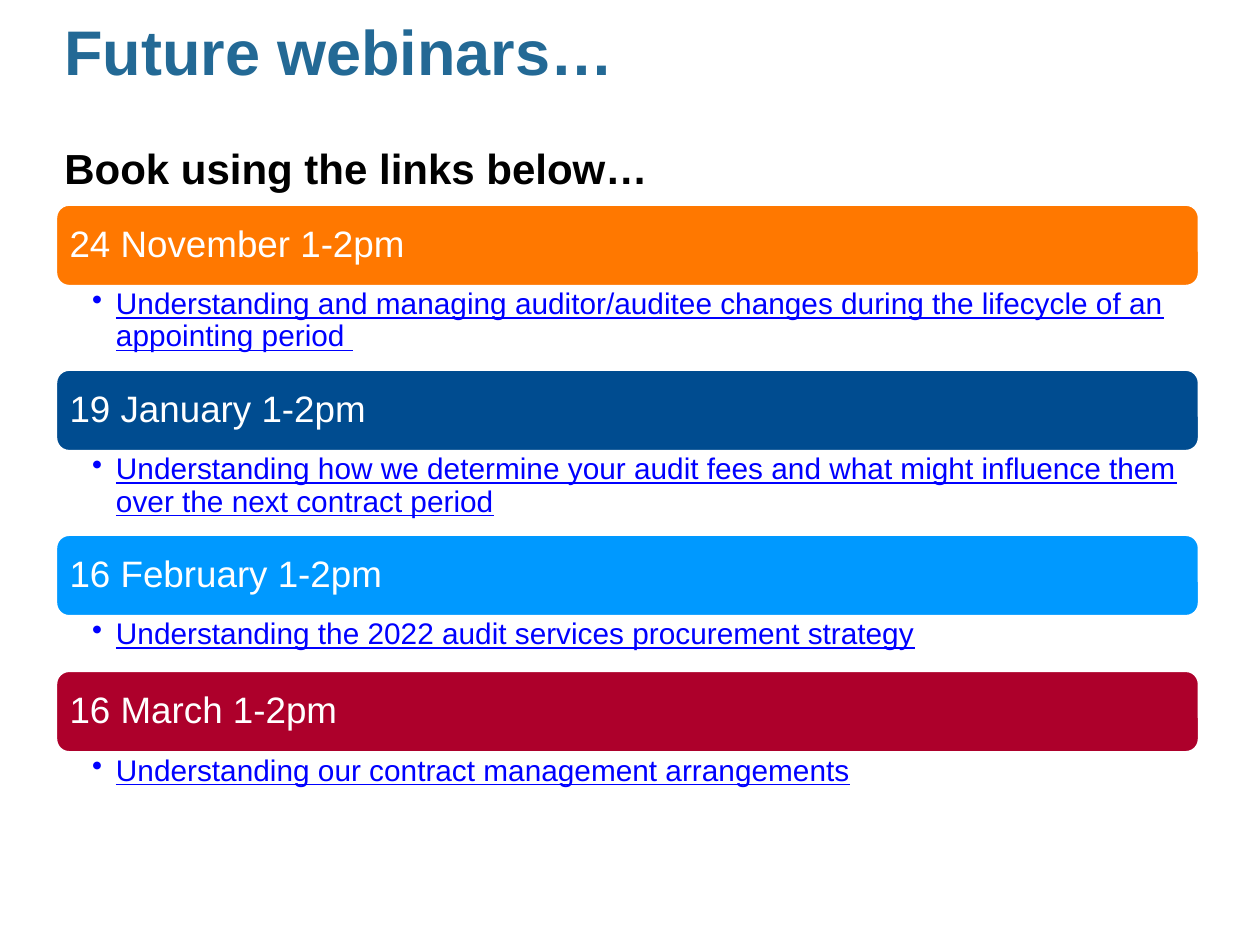
from lxml import etree
from pptx import Presentation
from pptx import util as u
from pptx.dml.color import RGBColor
from pptx.enum import shapes, text
from pptx.oxml import ns

LEFT, WIDTH = 0.44, 9.08
BAR_HEIGHT = 0.655
LINK_LINE, LINK_PADDING = 0.23, 0.195

WEBINARS = [
    ("24 November 1-2pm", "FF7800", 2,
     "Understanding and managing auditor/auditee changes during the lifecycle of an appointing period "),
    ("19 January 1-2pm", "004C90", 2,
     "Understanding how we determine your audit fees and what might influence them over the next contract period"),
    ("16 February 1-2pm", "0099FF", 1,
     "Understanding the 2022 audit services procurement strategy"),
    ("16 March 1-2pm", "AD002B", 1,
     "Understanding our contract management arrangements"),
]


def colour(value):
    return RGBColor.from_string(value)


def set_frame(frame, anchor, left, top, right, bottom):
    """Wrap the text and set its anchor and its insets in inches."""
    frame.word_wrap = True
    frame.auto_size = text.MSO_AUTO_SIZE.NONE
    frame.vertical_anchor = anchor
    frame.margin_left, frame.margin_top = u.Inches(left), u.Inches(top)
    frame.margin_right, frame.margin_bottom = u.Inches(right), u.Inches(bottom)


def format_runs(paragraph, size, value, bold=False, underline=False):
    paragraph.alignment = text.PP_ALIGN.LEFT
    for run in paragraph.runs:
        run.font.name, run.font.size = "Arial", u.Pt(size)
        run.font.bold, run.font.underline = bold, underline
        run.font.color.rgb = colour(value)


def add_bullet(paragraph, indent):
    properties = paragraph._p.get_or_add_pPr()
    properties.set("marL", str(u.Inches(indent)))
    properties.set("indent", str(-u.Inches(indent)))
    etree.SubElement(properties, ns.qn("a:buChar")).set("char", "•")


def place_title(title, left, top, width, height):
    title.left, title.top = u.Inches(left), u.Inches(top)
    title.width, title.height = u.Inches(width), u.Inches(height)
    frame = title.text_frame
    set_frame(frame, text.MSO_ANCHOR.TOP, 0.07, 0.1, 0.1, 0.05)
    frame.text = "Future webinars…\nBook using the links below…"
    heading, prompt = frame.paragraphs
    heading.space_before = u.Pt(0)
    prompt.space_before = u.Pt(31)
    format_runs(heading, 36, "236995", bold=True)
    format_runs(prompt, 24, "000000", bold=True)


def add_date_bar(slide, date, fill, left, top, width, height):
    bar = slide.shapes.add_shape(
        shapes.MSO_SHAPE.ROUNDED_RECTANGLE,
        u.Inches(left), u.Inches(top), u.Inches(width), u.Inches(height))
    bar.shadow.inherit = False
    bar.fill.solid()
    bar.fill.fore_color.rgb = colour(fill)
    bar.line.color.rgb = colour("FFFFFF")
    bar.line.width = u.Pt(2)
    # The rounded corners already inset the text area a little.
    set_frame(bar.text_frame, text.MSO_ANCHOR.MIDDLE, 0.08, 0.08, 0.08, 0.08)
    bar.text_frame.text = date
    paragraph = bar.text_frame.paragraphs[0]
    paragraph.line_spacing = 0.9
    format_runs(paragraph, 21, "FFFFFF")


def add_link(slide, topic, left, top, width, height):
    box = slide.shapes.add_textbox(
        u.Inches(left), u.Inches(top), u.Inches(width), u.Inches(height))
    set_frame(box.text_frame, text.MSO_ANCHOR.TOP, 0.29, 0.02, 0.13, 0.02)
    box.text_frame.text = topic
    paragraph = box.text_frame.paragraphs[0]
    paragraph.line_spacing = 0.9
    add_bullet(paragraph, 0.19)
    format_runs(paragraph, 17, "0000FF", underline=True)


def add_webinars(slide, left, top, width):
    """Stack date bars, each followed by room for the lines of its link."""
    for date, fill, lines, topic in WEBINARS:
        link_height = lines * LINK_LINE + LINK_PADDING
        add_date_bar(slide, date, fill, left, top, width, BAR_HEIGHT)
        add_link(slide, topic, left, top + BAR_HEIGHT, width, link_height)
        top += BAR_HEIGHT + link_height


def main():
    presentation = Presentation()
    presentation.slide_width, presentation.slide_height = u.Inches(10), u.Inches(7.5)
    slide = presentation.slides.add_slide(presentation.slide_layouts[5])
    place_title(slide.shapes.title, LEFT, 0, 9, 1.52)
    add_webinars(slide, LEFT, 1.62, WIDTH)
    presentation.save("out.pptx")


if __name__ == "__main__":
    main()
